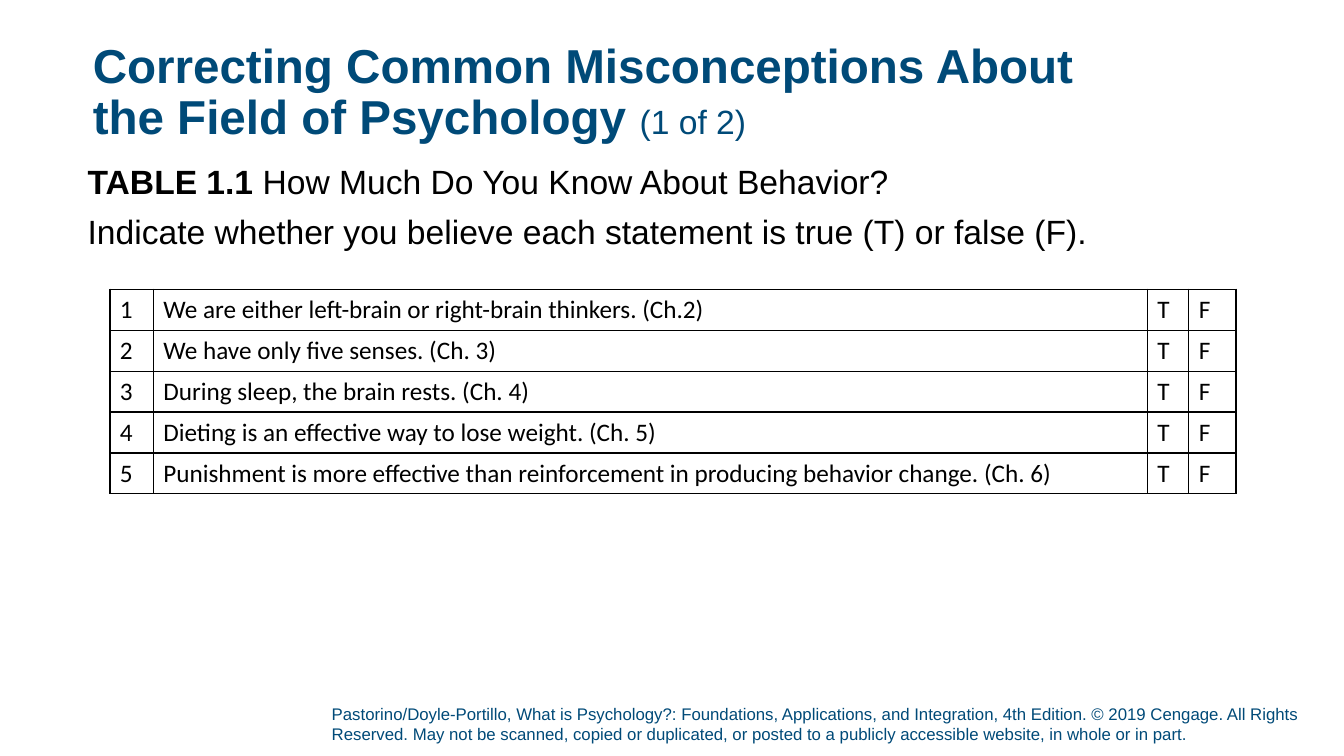
from lxml.etree import SubElement
from pptx import Presentation
from pptx.dml.color import RGBColor
from pptx.enum.text import MSO_ANCHOR as Anchor, MSO_AUTO_SIZE as AutoSize, PP_ALIGN as Align
from pptx.oxml.ns import qn
from pptx.util import Inches, Pt

BLUE, BLACK = "004A78", "000000"
STATEMENTS = [
    "We are either left-brain or right-brain thinkers. (Ch.2)",
    "We have only five senses. (Ch. 3)",
    "During sleep, the brain rests. (Ch. 4)",
    "Dieting is an effective way to lose weight. (Ch. 5)",
    "Punishment is more effective than reinforcement in producing behavior change. (Ch. 6)",
]
COPYRIGHT = (
    "Pastorino/Doyle-Portillo, What is Psychology?: Foundations, Applications, and Integration, "
    "4th Edition. © 2019 Cengage. All Rights Reserved. May not be scanned, copied or duplicated, "
    "or posted to a publicly accessible website, in whole or in part."
)


def color(hex_code):
    """Turn a hex string into a colour."""
    return RGBColor.from_string(hex_code)


def add_text(p, text, size=24, fill=BLACK, bold=False, font="Arial"):
    """Add a formatted run to a paragraph."""
    r = p.add_run()
    r.text = text
    r.font.size, r.font.bold, r.font.name = Pt(size), bold, font
    r.font.color.rgb = color(fill)


def place(sp, box, anchor, bottom=0):
    """Move a text shape to its box and return its text frame."""
    sp.left, sp.top, sp.width, sp.height = (Inches(v) for v in box)
    tf = sp.text_frame
    tf.word_wrap, tf.auto_size, tf.vertical_anchor = True, AutoSize.NONE, anchor
    tf.margin_left = tf.margin_right = tf.margin_top = 0
    tf.margin_bottom = Inches(bottom)
    return tf


def fill_title(sp, box):
    """Write the two-line title with its part number."""
    p = place(sp, box, Anchor.MIDDLE).paragraphs[0]
    p.alignment, p.line_spacing = Align.LEFT, 0.9
    add_text(p, "Correcting Common Misconceptions About", 34, BLUE, True)
    p.add_line_break()
    add_text(p, "the Field of Psychology ", 34, BLUE, True)
    add_text(p, "(1 of 2)", 24, BLUE)


def fill_intro(sp, box):
    """Write the table caption and the instruction."""
    tf = place(sp, box, Anchor.TOP)
    caption, instruction = tf.paragraphs[0], tf.add_paragraph()
    for p, space in ((caption, 0), (instruction, 10)):
        pPr = p._p.get_or_add_pPr()
        pPr.set("marL", str(Inches(0.06)))
        pPr.set("indent", "0")
        SubElement(pPr, qn("a:buNone"))
        p.line_spacing, p.space_before = 0.9, Pt(space)
    add_text(caption, "TABLE 1.1", bold=True)
    add_text(caption, " How Much Do You Know About Behavior?")
    add_text(instruction, "Indicate whether you believe each statement is true (T) or false (F).")


def draw_borders(cell, width=1):
    """Line all four sides of a cell."""
    tcPr = cell._tc.get_or_add_tcPr()
    for side in ("lnL", "lnR", "lnT", "lnB"):
        ln = SubElement(tcPr, qn(f"a:{side}"), w=str(Pt(width)))
        SubElement(SubElement(ln, qn("a:solidFill")), qn("a:srgbClr"), val=BLACK)


def add_quiz(s, box, columns):
    """Add the numbered true-or-false table."""
    frame = s.shapes.add_table(len(STATEMENTS), len(columns), *(Inches(v) for v in box))
    table = frame.table
    table.first_row = table.horz_banding = False
    for column, width in zip(table.columns, columns):
        column.width = Inches(width)
    for i, statement in enumerate(STATEMENTS):
        for j, text in enumerate((str(i + 1), statement, "T", "F")):
            cell = table.cell(i, j)
            draw_borders(cell)
            cell.fill.background()
            add_text(cell.text_frame.paragraphs[0], text, 18, font="Calibri")


def add_copyright(s, box):
    """Add the copyright line at the foot of the slide."""
    sp = s.shapes.add_textbox(0, 0, 0, 0)
    tf = place(sp, box, Anchor.BOTTOM, bottom=0.05)
    add_text(tf.paragraphs[0], COPYRIGHT, 12, BLUE)


def main():
    """Build the slide and save it."""
    prs = Presentation()
    prs.slide_width, prs.slide_height = Inches(13.33), Inches(7.5)
    s = prs.slides.add_slide(prs.slide_layouts[1])
    add_copyright(s, (3.29, 6.98, 9.79, 0.45))
    fill_title(s.shapes.title, (0.92, 0.4, 11.5, 1.06))
    fill_intro(s.placeholders[1], (0.81, 1.64, 11.71, 0.92))
    add_quiz(s, (1.09, 2.87, 11.17, 2.03), (0.43, 9.86, 0.41, 0.47))
    prs.save("out.pptx")


if __name__ == "__main__":
    main()
